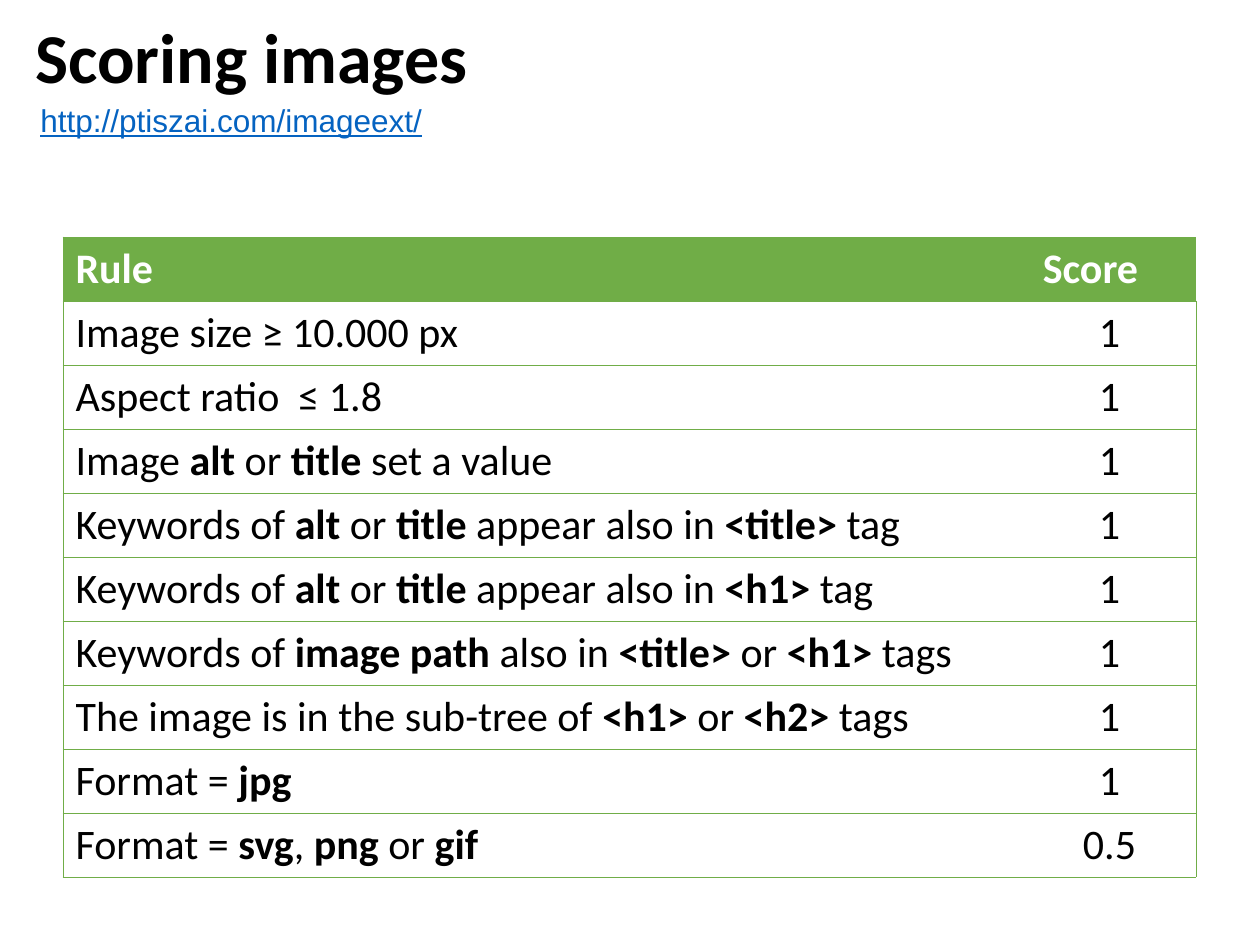
import pptx
import pptx.dml.color
import pptx.enum.text
import pptx.oxml
import pptx.oxml.ns
import pptx.util

RGBColor = pptx.dml.color.RGBColor
GREEN = RGBColor(0x70, 0xAD, 0x47)
WHITE = RGBColor(0xFF, 0xFF, 0xFF)
BLACK = RGBColor(0, 0, 0)
LINK = RGBColor(0x05, 0x63, 0xC1)
PX = 914400 / 126

# Asterisks enclose the bold parts of a rule.
ROWS = [
    ("Rule", "Score"),
    ("Image size ≥ 10.000 px", "1"),
    ("Aspect ratio  ≤ 1.8", "1"),
    ("Image *alt* or *title* set a value", "1"),
    ("Keywords of *alt* or *title* appear also in *<title>* tag", "1"),
    ("Keywords of *alt* or *title* appear also in *<h1>* tag", "1"),
    ("Keywords of *image path* also in *<title>* or *<h1>* tags", "1"),
    ("The image is in the sub-tree of *<h1>* or *<h2>* tags", "1"),
    ("Format = *jpg*", "1"),
    ("Format = *svg*, *png* or *gif*", "0.5"),
]
COLUMNS = [922, 38, 173]
ROW_HEIGHT = 64


def px(n):
    return pptx.util.Emu(round(n * PX))


def set_borders(cell, sides):
    """Draw a thin green line on the named sides and none on the others."""
    tcPr = cell._tc.get_or_add_tcPr()
    for i, side in enumerate("LRTB"):
        fill = f'<a:solidFill><a:srgbClr val="{GREEN}"/></a:solidFill>' if side in sides else "<a:noFill/>"
        ns = pptx.oxml.ns.nsdecls("a")
        tcPr.insert(i, pptx.oxml.parse_xml(f'<a:ln{side} {ns} w="6350">{fill}</a:ln{side}>'))


prs = pptx.Presentation()
prs.slide_width, prs.slide_height = px(1260), px(945)
s = prs.slides.add_slide(prs.slide_layouts[6])

# Rules table: the header's score spans columns 1-2, the other rules span 0-1
table = s.shapes.add_table(len(ROWS), len(COLUMNS), px(63), px(237),
                           px(sum(COLUMNS)), px(ROW_HEIGHT * len(ROWS))).table
table.first_row = False
table.horz_banding = False
for column, width in zip(table.columns, COLUMNS):
    column.width = px(width)
for i, (rule, score) in enumerate(ROWS):
    header = i == 0
    table.rows[i].height = px(ROW_HEIGHT)
    for j in range(len(COLUMNS)):
        cell = table.cell(i, j)
        if header:
            cell.fill.solid()
            cell.fill.fore_color.rgb = GREEN
        else:
            cell.fill.background()
        set_borders(cell, ("LTB", "TB", "RTB")[j])
    first = 1 if header else 0
    table.cell(i, first).merge(table.cell(i, first + 1))

    score_column = 1 if header else 2
    for j, text in ((0, rule), (score_column, score)):
        p = table.cell(i, j).text_frame.paragraphs[0]
        if j:
            p.alignment = pptx.enum.text.PP_ALIGN.CENTER
        p.font.name = "Calibri"
        p.font.size = pptx.util.Pt(24)
        p.font.color.rgb = WHITE if header else BLACK
        for k, part in enumerate(text.split("*")):
            if part:
                r = p.add_run()
                r.text = part
                r.font.bold = header or k % 2 == 1

# Web address
tf = s.shapes.add_textbox(px(28), px(95), px(407), px(50)).text_frame
tf.word_wrap = False
tf.auto_size = pptx.enum.text.MSO_AUTO_SIZE.SHAPE_TO_FIT_TEXT
p = tf.paragraphs[0]
p.text = "http://ptiszai.com/imageext/"
p.font.name = "Arial"
p.font.size = pptx.util.Pt(18)
p.font.underline = True
p.font.color.rgb = LINK

# Title
tf = s.shapes.add_textbox(px(23), px(20), px(1086), px(81)).text_frame
tf.word_wrap = True
tf.vertical_anchor = pptx.enum.text.MSO_ANCHOR.MIDDLE
p = tf.paragraphs[0]
p.text = "Scoring images"
p.line_spacing = 0.9
p.font.name = "Calibri"
p.font.size = pptx.util.Pt(40)
p.font.bold = True
p.font.color.rgb = BLACK

prs.save("out.pptx")
